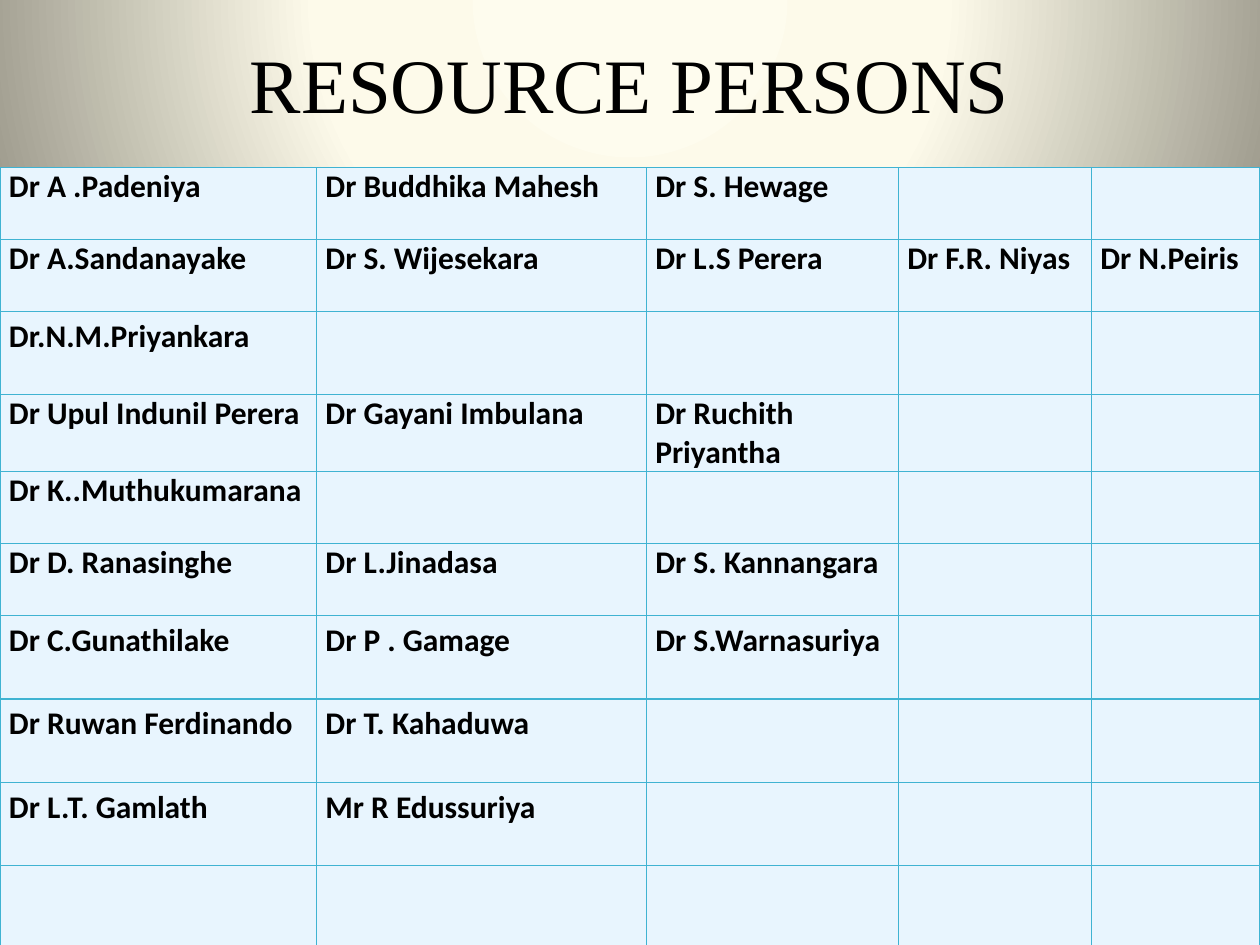
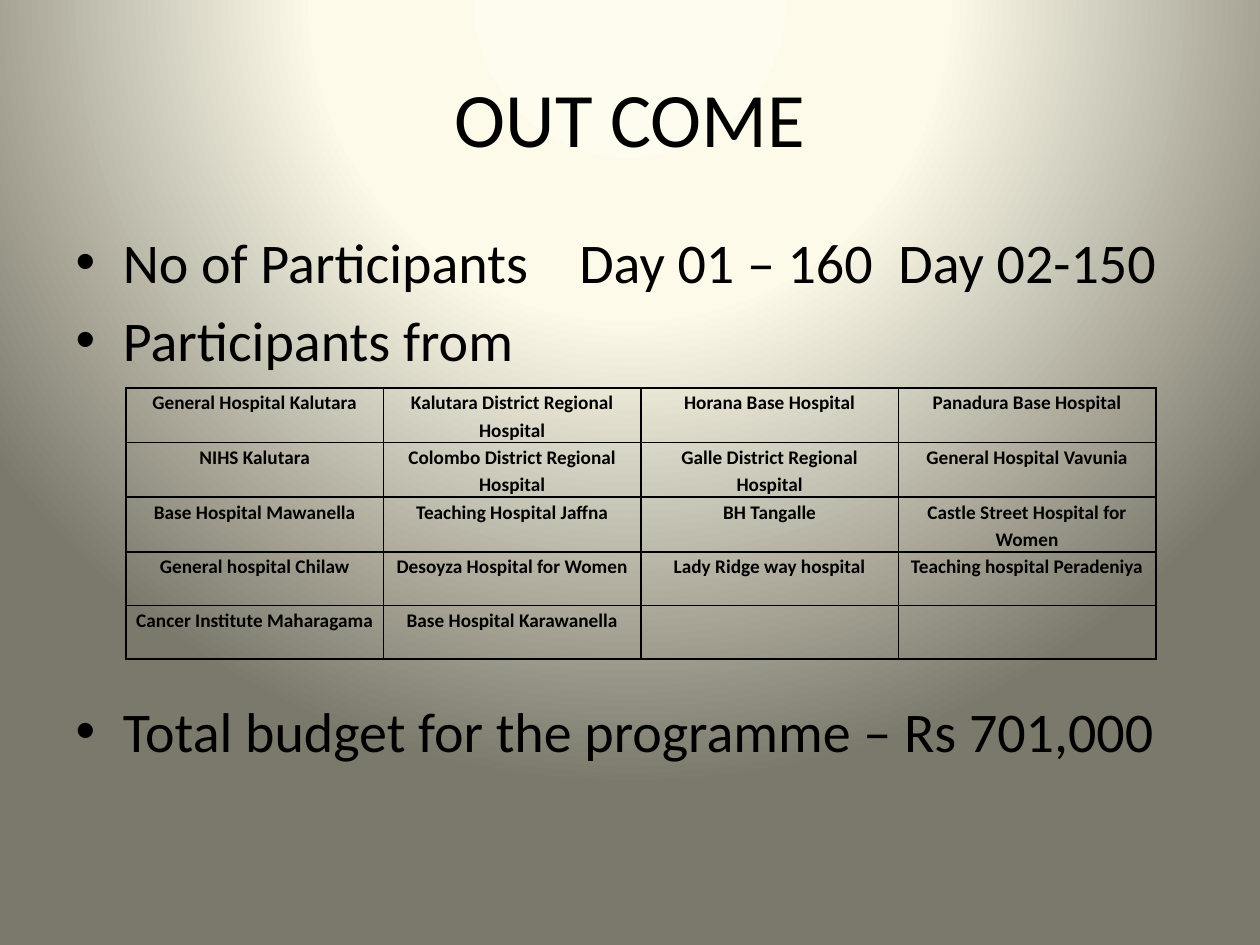
import lxml.etree
import pptx
import pptx.dml.color
import pptx.enum.text
import pptx.oxml
import pptx.oxml.ns
import pptx.util

Cm = pptx.util.Cm
Pt = pptx.util.Pt
CENTER = pptx.enum.text.PP_ALIGN.CENTER
COLORS = {
    "text": "000000",
    "cell": "E8F5FE",
    "border": "3FB3D2",
    "glow": "FEFCEE",
    "cream": "FDFAEA",
    "olive": "7B796B",
}


def write_text(paragraph, text, size, font="Calibri", bold=False, align=None,
               line_spacing=None, space_before=None, tracking=None):
    run = paragraph.add_run()
    run.text = text
    run.font.size = Pt(size)
    run.font.name = font
    run.font.bold = bold
    run.font.color.rgb = pptx.dml.color.RGBColor.from_string(COLORS["text"])
    if align is not None:
        paragraph.alignment = align
    if line_spacing is not None:
        paragraph.line_spacing = line_spacing
    if space_before is not None:
        paragraph.space_before = Pt(space_before)
    if tracking is not None:
        run.font._element.set("spc", str(round(tracking * 100)))


def add_grid(slide, left, top, widths, heights, border, border_width, fill=None):
    table = slide.shapes.add_table(len(heights), len(widths), Cm(left), Cm(top),
                                   Cm(sum(widths)), Cm(sum(heights))).table
    table.first_row = False
    table.horz_banding = False
    for column, width in zip(table.columns, widths):
        column.width = Cm(width)
    for row, height in zip(table.rows, heights):
        row.height = Cm(height)
    for cell in table.iter_cells():
        cell.margin_left = cell.margin_right = Cm(0.18)
        cell.margin_top = cell.margin_bottom = 0
        properties = cell._tc.get_or_add_tcPr()
        for side in ("lnL", "lnR", "lnT", "lnB"):
            line = lxml.etree.SubElement(properties, pptx.oxml.ns.qn(f"a:{side}"), w=str(Pt(border_width)))
            line_fill = lxml.etree.SubElement(line, pptx.oxml.ns.qn("a:solidFill"))
            lxml.etree.SubElement(line_fill, pptx.oxml.ns.qn("a:srgbClr"), val=COLORS[border])
        if fill:
            cell.fill.solid()
            cell.fill.fore_color.rgb = pptx.dml.color.RGBColor.from_string(COLORS[fill])
        else:
            cell.fill.background()
    return table


presentation = pptx.Presentation()
presentation.slide_width = Cm(25.4)
presentation.slide_height = Cm(19.05)

master = presentation.slide_master
master.background.fill.solid()
background = master._element.xpath(".//p:bgPr")[0]
stops = "".join(
    f'<a:gs pos="{position * 1000}"><a:srgbClr val="{COLORS[name]}"/></a:gs>'
    for position, name in ((0, "glow"), (40, "cream"), (100, "olive")))
gradient = pptx.oxml.parse_xml(
    f'<a:gradFill {pptx.oxml.ns.nsdecls("a")} rotWithShape="1"><a:gsLst>{stops}</a:gsLst>'
    '<a:path path="circle"><a:fillToRect l="50000" t="-80000" r="50000" b="180000"/></a:path>'
    '</a:gradFill>')
background.replace(background[0], gradient)

slides = []
for layout, title, font, top in ((5, "RESOURCE PERSONS", "Times New Roman", 0.08),
                                 (1, "OUT COME", "Calibri", 0.76)):
    slide = presentation.slides.add_slide(presentation.slide_layouts[layout])
    shape = slide.shapes.title
    shape.left, shape.top, shape.width, shape.height = Cm(1.27), Cm(top), Cm(22.86), Cm(3.18)
    shape.text_frame.auto_size = pptx.enum.text.MSO_AUTO_SIZE.NONE
    shape.text_frame.vertical_anchor = pptx.enum.text.MSO_ANCHOR.MIDDLE
    write_text(shape.text_frame.paragraphs[0], title, 44, font=font, align=CENTER)
    slides.append(slide)
persons_slide, outcome_slide = slides

persons = [
    ["Dr A .Padeniya", "Dr Buddhika Mahesh", "Dr S. Hewage"],
    ["Dr A.Sandanayake", "Dr S. Wijesekara", "Dr L.S Perera", "Dr F.R. Niyas", "Dr N.Peiris"],
    ["Dr.N.M.Priyankara"],
    ["Dr Upul Indunil Perera", "Dr Gayani Imbulana", "Dr Ruchith Priyantha"],
    ["Dr K..Muthukumarana"],
    ["Dr D. Ranasinghe", "Dr L.Jinadasa", "Dr S. Kannangara"],
    ["Dr C.Gunathilake", "Dr P . Gamage", "Dr S.Warnasuriya"],
    ["Dr Ruwan Ferdinando", "Dr T. Kahaduwa"],
    ["Dr L.T. Gamlath", "Mr R Edussuriya"],
    [],
]
tall_rows = {2, 6, 7, 8, 9}
person_heights = [1.68 if index in tall_rows else 1.45 for index in range(len(persons))]
persons_table = add_grid(persons_slide, 0, 3.38, [6.38, 6.65, 5.08, 3.89, 3.4], person_heights,
                         "border", 0.75, fill="cell")
for row, names in enumerate(persons):
    for column, name in enumerate(names):
        write_text(persons_table.cell(row, column).text_frame.paragraphs[0], name, 18, bold=True,
                   line_spacing=1.15 if row in tall_rows else None)

body = outcome_slide.placeholders[1]
body.left, body.top, body.width, body.height = Cm(1.27), Cm(4.45), Cm(22.86), Cm(12.57)
body.text_frame.auto_size = pptx.enum.text.MSO_AUTO_SIZE.NONE
participants = body.text_frame.paragraphs[0]
for text, tracking in (("No of Participants", None), (" ", 21.7), ("Day 01 – 160", None),
                       (" ", 7.2), ("Day 02-150", None)):
    write_text(participants, text, 32, tracking=tracking)
write_text(body.text_frame.add_paragraph(), "Participants from", 32)
write_text(body.text_frame.add_paragraph(), "Total budget for the programme – Rs 701,000", 32,
           space_before=185)

hospitals = [
    ["General Hospital Kalutara", "Kalutara District Regional Hospital",
     "Horana Base Hospital", "Panadura Base Hospital"],
    ["NIHS Kalutara", "Colombo District Regional Hospital",
     "Galle District Regional Hospital", "General Hospital Vavunia"],
    ["Base Hospital Mawanella", "Teaching Hospital Jaffna",
     "BH Tangalle", "Castle Street Hospital for Women"],
    ["General hospital Chilaw", "Desoyza Hospital for Women",
     "Lady Ridge way hospital", "Teaching hospital Peradeniya"],
    ["Cancer Institute Maharagama", "Base Hospital Karawanella"],
]
hospitals_table = add_grid(outcome_slide, 2.54, 7.82, [5.19] * 4, [1.08] * len(hospitals), "text", 1)
for row, names in enumerate(hospitals):
    for column, name in enumerate(names):
        write_text(hospitals_table.cell(row, column).text_frame.paragraphs[0], name, 11, bold=True,
                   align=CENTER, line_spacing=1.15)

presentation.save("out.pptx")
